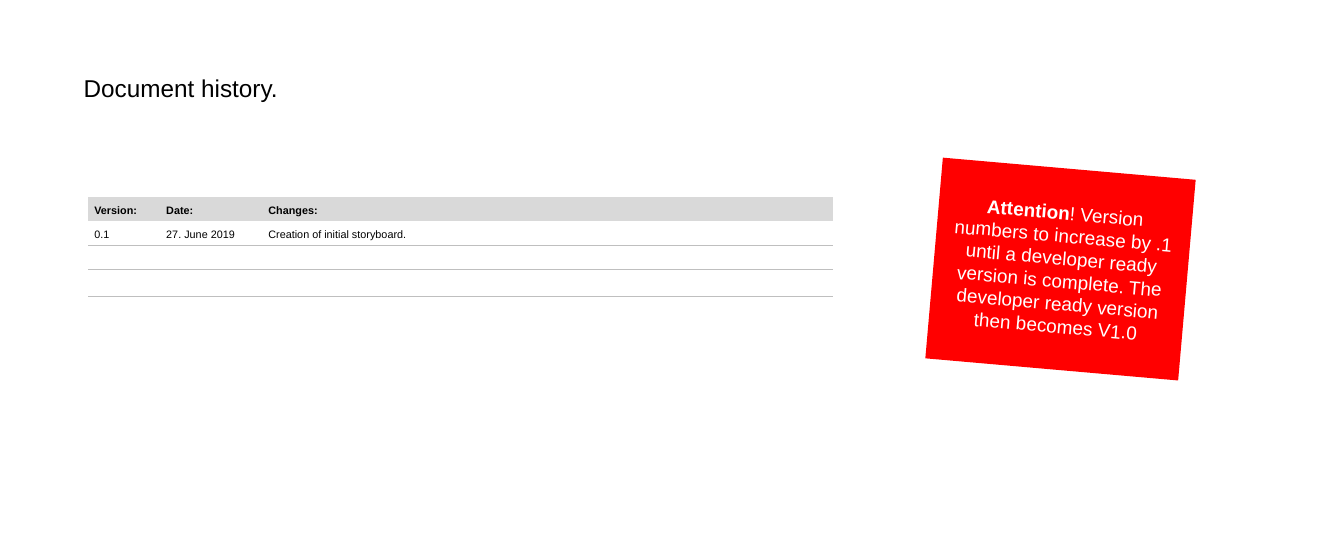
from dataclasses import dataclass

from lxml import etree
from pptx import Presentation
from pptx.dml.color import RGBColor
from pptx.enum import shapes, text
from pptx.oxml import ns
from pptx.util import Inches, Pt

HEADING = "Document history."
HISTORY = [
    ("Version:", "Date:", "Changes:"),
    ("0.1", "27. June 2019", "Creation of initial storyboard."),
    ("", "", ""),
    ("", "", ""),
    ("", "", ""),
]
COLUMN_WIDTHS = (0.74, 1.05, 5.87)
ROW_HEIGHTS = (0.25, 0.25, 0.25, 0.27, 0.24)
RULED_ROWS = (1, 2, 3)
NOTICE = [
    ("Attention", True),
    ("! Version numbers to increase by .1 until a developer ready version "
     "is complete. The developer ready version then becomes V1.0", False),
]


@dataclass(frozen=True)
class Theme:
    font: str = "Arial"
    ink: str = "000000"
    paper: str = "FFFFFF"
    header: str = "D9D9D9"
    rule: str = "BFBFBF"
    alert: str = "FF0000"
    heading_size: float = 18
    notice_size: float = 14
    table_size: float = 8
    rule_width: float = 0.25


THEME = Theme()


def add_run(paragraph, words, size, color, bold=False):
    run = paragraph.add_run()
    run.text = words
    run.font.name = THEME.font
    run.font.size = Pt(size)
    run.font.bold = bold
    run.font.color.rgb = RGBColor.from_string(color)


def set_borders(cell, ruled_sides):
    properties = cell._tc.get_or_add_tcPr()
    for position, side in enumerate("LRTB"):
        border = etree.Element(ns.qn(f"a:ln{side}"))
        if side in ruled_sides:
            border.set("w", str(Pt(THEME.rule_width)))
            fill = etree.SubElement(border, ns.qn("a:solidFill"))
            etree.SubElement(fill, ns.qn("a:srgbClr"), val=THEME.rule)
        else:
            border.set("w", "0")
            etree.SubElement(border, ns.qn("a:noFill"))
        properties.insert(position, border)


def add_heading(slide):
    heading = slide.shapes.title
    heading.left, heading.top = Inches(0.76), Inches(0.7)
    heading.width, heading.height = Inches(2.22), Inches(0.4)
    frame = heading.text_frame
    frame.word_wrap = False
    frame.auto_size = text.MSO_AUTO_SIZE.NONE
    frame.vertical_anchor = text.MSO_ANCHOR.MIDDLE
    paragraph = frame.paragraphs[0]
    paragraph.alignment = text.PP_ALIGN.LEFT
    paragraph.line_spacing = 1.0
    add_run(paragraph, HEADING, THEME.heading_size, THEME.ink)


def fill_cell(cell, words, row, column):
    cell.margin_left = cell.margin_right = Inches(0.06)
    cell.margin_top = cell.margin_bottom = 0
    cell.vertical_anchor = text.MSO_ANCHOR.MIDDLE
    if row == 0:
        cell.fill.solid()
        cell.fill.fore_color.rgb = RGBColor.from_string(THEME.header)
    else:
        cell.fill.background()
    set_borders(cell, ("T" if row - 1 in RULED_ROWS else "")
                + ("B" if row in RULED_ROWS else ""))
    paragraph = cell.text_frame.paragraphs[0]
    if words:
        dated = row > 0 and column == 1
        paragraph.alignment = text.PP_ALIGN.LEFT if dated else text.PP_ALIGN.JUSTIFY
        paragraph.line_spacing = 1.3
        paragraph.space_before = Pt(6)
        add_run(paragraph, words, THEME.table_size, THEME.ink, row == 0)
    else:
        etree.SubElement(paragraph._p, ns.qn("a:endParaRPr"),
                         sz=str(int(THEME.table_size * 100)))


def add_history(slide):
    history = slide.shapes.add_table(
        len(HISTORY), len(COLUMN_WIDTHS), Inches(0.91), Inches(2.02),
        Inches(sum(COLUMN_WIDTHS)), Inches(sum(ROW_HEIGHTS))).table
    history.first_row = history.horz_banding = False
    for column, width in zip(history.columns, COLUMN_WIDTHS):
        column.width = Inches(width)
    for row, height in zip(history.rows, ROW_HEIGHTS):
        row.height = Inches(height)
    for row, entry in enumerate(HISTORY):
        for column, words in enumerate(entry):
            fill_cell(history.cell(row, column), words, row, column)


def add_notice(slide):
    notice = slide.shapes.add_shape(
        shapes.MSO_SHAPE.RECTANGLE, Inches(9.6), Inches(1.73), Inches(2.61), Inches(2.07))
    notice.rotation = 5
    notice.shadow.inherit = False
    notice.fill.solid()
    notice.fill.fore_color.rgb = RGBColor.from_string(THEME.alert)
    notice.line.fill.background()
    frame = notice.text_frame
    frame.word_wrap = True
    frame.vertical_anchor = text.MSO_ANCHOR.MIDDLE
    paragraph = frame.paragraphs[0]
    paragraph.alignment = text.PP_ALIGN.CENTER
    for words, bold in NOTICE:
        add_run(paragraph, words, THEME.notice_size, THEME.paper, bold)


def main():
    deck = Presentation()
    deck.slide_width, deck.slide_height = Inches(13.82), Inches(5.62)
    slide = deck.slides.add_slide(deck.slide_layouts[5])
    add_heading(slide)
    add_history(slide)
    add_notice(slide)
    deck.save("out.pptx")


if __name__ == "__main__":
    main()
